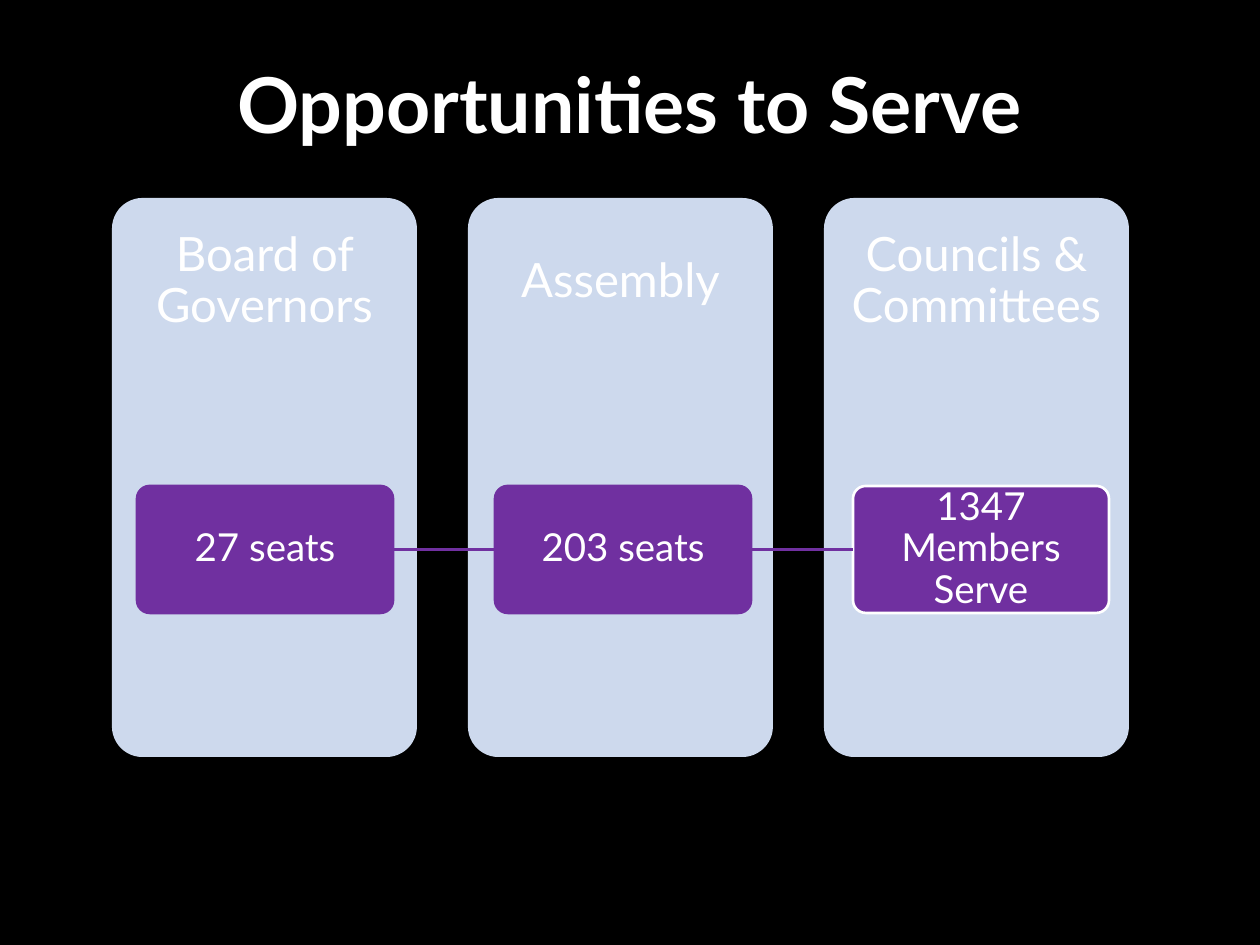
from lxml import etree
from pptx import Presentation
from pptx import util as u
from pptx.dml.color import RGBColor
from pptx.enum import shapes, text
from pptx.oxml.ns import qn

PX_PER_INCH = 126
FONT = "Lato"
WHITE, BLACK, PANEL, PURPLE = "FFFFFF", "000000", "CDD9ED", "7030A0"
GROUPS = [
    ("Board of Governors", "27 seats", PURPLE),
    ("Assembly", "203 seats", PURPLE),
    ("Councils & Committees", "1347 Members Serve", WHITE),
]
PANEL_LEFT, PANEL_PITCH, PANEL_TOP, PANEL_W, PANEL_H = 112, 356, 198, 305, 559
HEADING_H = 168
SEATS_LEFT, SEATS_PITCH, SEATS_TOP, SEATS_W, SEATS_H = 137, 358, 486, 256, 127


def px(length):
    return u.Emu(round(length * u.Inches(1) / PX_PER_INCH))


def color(hex_value):
    return RGBColor.from_string(hex_value)


def write(shape, words, size, inset, bold=False, spacing=0.9):
    """Centre one white paragraph in the shape."""
    frame = shape.text_frame
    frame.word_wrap = True
    frame.vertical_anchor = text.MSO_ANCHOR.MIDDLE
    frame.margin_left = frame.margin_right = px(inset)
    frame.margin_top = frame.margin_bottom = px(inset)
    paragraph = frame.paragraphs[0]
    paragraph.text = words
    paragraph.alignment = text.PP_ALIGN.CENTER
    paragraph.line_spacing = spacing
    font = paragraph.font
    font.name, font.size, font.bold = FONT, u.Pt(size), bold
    font.color.rgb = color(WHITE)


def add_label(slide, box, words, size, inset, **style):
    write(slide.shapes.add_textbox(*map(px, box)), words, size, inset, **style)


def add_rounded(slide, box, fill, outline=None):
    shape = slide.shapes.add_shape(
        shapes.MSO_SHAPE.ROUNDED_RECTANGLE, *map(px, box))
    shape.adjustments[0] = 0.1
    shape.shadow.inherit = False
    shape.fill.solid()
    shape.fill.fore_color.rgb = color(fill)
    if outline:
        shape.line.color.rgb = color(outline)
        shape.line.width = u.Pt(1.5)
    else:
        shape.line.fill.background()
    return shape


def join(slide, left_box, right_box):
    link = slide.shapes.add_connector(shapes.MSO_CONNECTOR.STRAIGHT, 0, 0, 0, 0)
    link.begin_connect(left_box, 3)
    link.end_connect(right_box, 1)
    link.line.color.rgb = color(PURPLE)
    link.line.width = u.Pt(1.5)
    etree.SubElement(link._element.spPr, qn("a:effectLst"))


def add_panel(slide, column, heading):
    left = PANEL_LEFT + column * PANEL_PITCH
    add_rounded(slide, (left, PANEL_TOP, PANEL_W, PANEL_H), PANEL)
    add_label(slide, (left, PANEL_TOP, PANEL_W, HEADING_H), heading, 27, 26)


def add_seats(slide, column, seats, outline):
    left = SEATS_LEFT + column * SEATS_PITCH
    box = add_rounded(slide, (left, SEATS_TOP, SEATS_W, SEATS_H), PURPLE, outline)
    write(box, seats, 22, 3)
    return box


def main():
    deck = Presentation()
    deck.slide_width, deck.slide_height = px(1260), px(945)
    slide = deck.slides.add_slide(deck.slide_layouts[6])
    slide.background.fill.solid()
    slide.background.fill.fore_color.rgb = color(BLACK)

    add_label(slide, (94, 4, 1071, 197), "Opportunities to Serve", 44, 6,
              bold=True, spacing=1.0)
    for column, (heading, _, _) in enumerate(GROUPS):
        add_panel(slide, column, heading)
    seat_boxes = [add_seats(slide, column, seats, outline)
                  for column, (_, seats, outline) in enumerate(GROUPS)]
    for left_box, right_box in zip(seat_boxes, seat_boxes[1:]):
        join(slide, left_box, right_box)

    deck.save("out.pptx")


if __name__ == "__main__":
    main()
